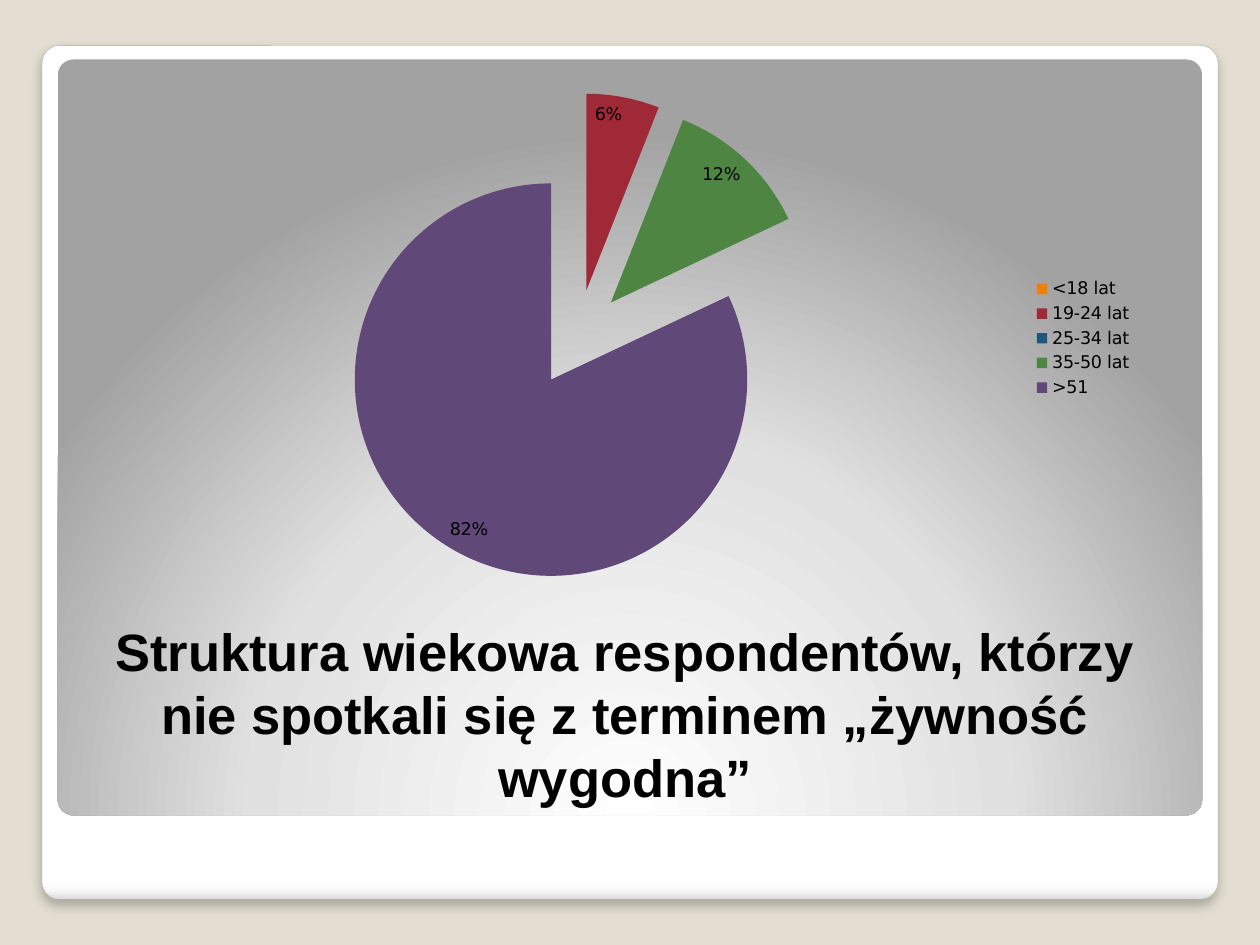
from lxml import etree
from pptx import Presentation
from pptx import util as u
from pptx.chart.data import CategoryChartData
from pptx.dml.color import RGBColor
from pptx.enum import chart as ch, shapes, text
from pptx.oxml import parse_xml
from pptx.oxml.ns import nsdecls, qn

Pt = u.Pt
TITLE = "Struktura wiekowa respondentów, którzy nie spotkali się z terminem „żywność wygodna”"
BLACK = RGBColor(0, 0, 0)
BACKGROUND = RGBColor(0xE3, 0xDE, 0xD1)
FRAME_LINE = RGBColor(0xA4, 0xA4, 0xA4)
# Age group, share in percent, colour
AGES = [
    ("<18 lat", 0, RGBColor(0xF0, 0x7F, 0x09)),
    ("19-24 lat", 6, RGBColor(0x9F, 0x29, 0x36)),
    ("25-34 lat", 0, RGBColor(0x1B, 0x58, 0x7C)),
    ("35-50 lat", 12, RGBColor(0x4E, 0x85, 0x42)),
    (">51", 82, RGBColor(0x60, 0x48, 0x78)),
]
# Gradient stops: percent, colour
FRAME_STOPS = [(0, "FFFFFF"), (98, "FFFFFF"), (99, "F7F7F7"), (100, "DADADA")]
PANEL_STOPS = [(0, "FFFFFF"), (55, "E1E1E1"), (100, "A2A2A2")]
FRAME_DIRECTION = '<a:lin ang="5400000" scaled="0"/>'
PANEL_DIRECTION = ('<a:path path="circle"><a:fillToRect l="50000" t="175000" '
                   'r="50000" b="-75000"/></a:path>')


def add_panel(s, box, stops, direction):
    sp = s.shapes.add_shape(shapes.MSO_SHAPE.ROUNDED_RECTANGLE, *map(Pt, box))
    sp.adjustments[0] = 0.021
    sp.shadow.inherit = False
    sp.line.fill.background()
    gs = "".join(f'<a:gs pos="{pos * 1000}"><a:srgbClr val="{color}"/></a:gs>'
                 for pos, color in stops)
    sp._element.spPr.find(qn("a:prstGeom")).addnext(parse_xml(
        f'<a:gradFill {nsdecls("a")} rotWithShape="1"><a:gsLst>{gs}</a:gsLst>'
        f'{direction}</a:gradFill>'))
    return sp


prs = Presentation()
prs.slide_width, prs.slide_height = Pt(720), Pt(540)
s = prs.slides.add_slide(prs.slide_layouts[6])
s.background.fill.solid()
s.background.fill.fore_color.rgb = BACKGROUND

# White frame with a soft shadow, and the grey panel inside it
frame = add_panel(s, (24, 26, 672, 488), FRAME_STOPS, FRAME_DIRECTION)
frame.line.color.rgb = FRAME_LINE
frame.line.width = Pt(0.16)
frame._element.spPr.find(qn("a:effectLst")).append(parse_xml(
    f'<a:outerShdw {nsdecls("a")} blurRad="{Pt(6)}" dist="{Pt(4)}" dir="5400000" '
    'algn="tl" rotWithShape="0"><a:srgbClr val="000000"><a:alpha val="25000"/>'
    '</a:srgbClr></a:outerShdw>'))
add_panel(s, (33, 34, 654, 432), PANEL_STOPS, PANEL_DIRECTION)

# Title
tf = s.shapes.add_textbox(Pt(36.7), Pt(349.2), Pt(640.8), Pt(116.6)).text_frame
tf.word_wrap = True
tf.vertical_anchor = text.MSO_ANCHOR.MIDDLE
p = tf.paragraphs[0]
p.text = TITLE
p.alignment = text.PP_ALIGN.CENTER
p.font.name, p.font.size, p.font.bold = "Arial", Pt(30), True
p.font.color.rgb = BLACK

# Exploded pie
data = CategoryChartData()
data.categories = [age for age, _, _ in AGES]
data.add_series("Series 1", [share for _, share, _ in AGES])
chart = s.shapes.add_chart(ch.XL_CHART_TYPE.PIE_EXPLODED, Pt(70.6), Pt(43.2),
                           Pt(583.9), Pt(300.2), data).chart
chart.has_title = False
chart.font.name, chart.font.size = "DejaVu Sans", Pt(10)
chart.font.color.rgb = BLACK
chart.has_legend = True
chart.legend.position = ch.XL_LEGEND_POSITION.RIGHT
chart.legend.include_in_layout = False

plot = chart.plots[0]
plot.vary_by_categories = True
series = plot.series[0]
explosion = series._element.find(qn("c:explosion"))
if explosion is None:
    explosion = etree.Element(qn("c:explosion"))
    series._element.find(qn("c:cat")).addprevious(explosion)
explosion.set("val", "25")

labels = series.data_labels
labels.show_value = False
labels.show_percentage = True
labels.number_format, labels.number_format_is_linked = "0%", False
labels.position = ch.XL_LABEL_POSITION.INSIDE_END

empty = 0
for i, (_, share, color) in enumerate(AGES):
    fill = series.points[i].format.fill
    fill.solid()
    fill.fore_color.rgb = color
    if share == 0:  # empty groups carry no label
        labels._element.insert(empty, parse_xml(
            f'<c:dLbl {nsdecls("c")}><c:idx val="{i}"/><c:delete val="1"/></c:dLbl>'))
        empty += 1

prs.save("out.pptx")
